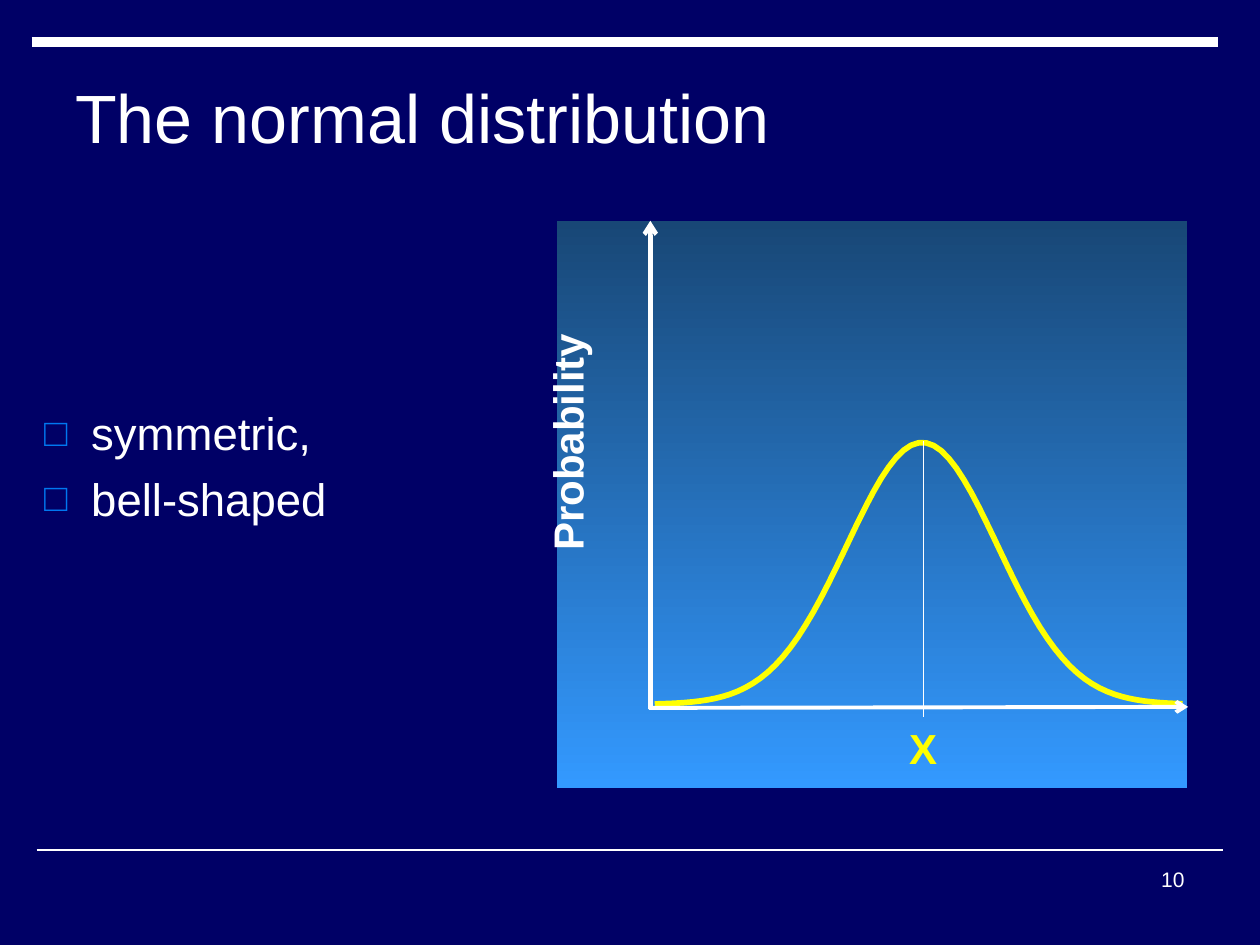
from dataclasses import dataclass
from math import exp

from lxml import etree
from pptx import Presentation
from pptx.dml.color import RGBColor
from pptx.enum.shapes import MSO_CONNECTOR, MSO_SHAPE
from pptx.enum.text import MSO_ANCHOR, PP_ALIGN
from pptx.oxml.ns import qn
from pptx.util import Cm, Pt

STRAIGHT = MSO_CONNECTOR.STRAIGHT
RECTANGLE = MSO_SHAPE.RECTANGLE
TOP, MIDDLE = MSO_ANCHOR.TOP, MSO_ANCHOR.MIDDLE
LEFT, RIGHT = PP_ALIGN.LEFT, PP_ALIGN.RIGHT


@dataclass(frozen=True)
class Theme:
    font: str = "Arial"
    background: str = "000066"
    white: str = "FFFFFF"
    yellow: str = "FFFF00"
    bullet: str = "0078F0"
    panel_top: str = "184776"
    panel_bottom: str = "3399FF"
    title_size: int = 39
    body_size: int = 26
    label_size: int = 24
    number_size: int = 12


theme = Theme()


def add_text(shapes, box, lines, size, color=theme.white, bold=False,
             anchor=TOP, align=LEFT, wrap=True):
    shape = shapes.add_textbox(*(Cm(value) for value in box))
    frame = shape.text_frame
    frame.word_wrap = wrap
    frame.vertical_anchor = anchor
    for index, line in enumerate(lines):
        paragraph = frame.add_paragraph() if index else frame.paragraphs[0]
        paragraph.alignment = align
        run = paragraph.add_run()
        run.text = line
        run.font.name = theme.font
        run.font.size = Pt(size)
        run.font.bold = bold
        run.font.color.rgb = RGBColor.from_string(color)
    return shape


def add_line(shapes, start, end, width, arrow=False):
    line = shapes.add_connector(STRAIGHT, *(Cm(value) for value in (*start, *end)))
    line.line.color.rgb = RGBColor.from_string(theme.white)
    line.line.width = Pt(width)
    if arrow:
        etree.SubElement(line.line._get_or_add_ln(), qn("a:tailEnd"), type="arrow")
    etree.SubElement(line._element.spPr, qn("a:effectLst"))
    return line


presentation = Presentation()
presentation.slide_width, presentation.slide_height = Cm(25.4), Cm(19.05)
slide = presentation.slides.add_slide(presentation.slide_layouts[6])
slide.background.fill.solid()
slide.background.fill.fore_color.rgb = RGBColor.from_string(theme.background)

# Rules at the top and the bottom
add_line(slide.shapes, (0.74, 17.14), (24.66, 17.14), 1)
add_line(slide.shapes, (0.64, 0.85), (24.56, 0.85), 6)

# Title
add_text(slide.shapes, (1.27, 0.76, 22.86, 3.18), ["The normal distribution"],
         theme.title_size, anchor=MIDDLE)

# Bullet list
body = add_text(slide.shapes, (0.64, 8.05, 9.96, 10.57),
                ["symmetric,", "bell-shaped"], theme.body_size)
for paragraph in body.text_frame.paragraphs:
    paragraph.space_before = Pt(6)
    properties = paragraph._p.get_or_add_pPr()
    properties.set("marL", str(Cm(0.95)))
    properties.set("indent", str(Cm(-0.95)))
    bullet_color = etree.SubElement(properties, qn("a:buClr"))
    etree.SubElement(bullet_color, qn("a:srgbClr"), val=theme.bullet)
    etree.SubElement(properties, qn("a:buSzPct"), val="85000")
    etree.SubElement(properties, qn("a:buFont"), typeface=theme.font)
    etree.SubElement(properties, qn("a:buChar"), char="□")

# Chart panel
graph = slide.shapes.add_group_shape().shapes
panel = graph.add_shape(RECTANGLE, Cm(11.23), Cm(4.45), Cm(12.7), Cm(11.43))
panel.shadow.inherit = False
panel.line.fill.background()
panel.fill.gradient()
panel.fill.gradient_angle = 270
for stop, color in zip(panel.fill.gradient_stops, (theme.panel_top, theme.panel_bottom)):
    stop.color.rgb = RGBColor.from_string(color)

# Bell curve
mean, deviation, base, height = 18.59, 1.52, 14.2, 5.28
first, last, steps = 13.2, 23.84, 70
points = []
for step in range(steps + 1):
    x = first + (last - first) * step / steps
    y = base - height * exp(-((x - mean) / deviation) ** 2 / 2)
    points.append((Cm(x), Cm(y)))
builder = graph.build_freeform(*points[0])
builder.add_line_segments(points[1:], close=False)
curve = builder.convert_to_shape()
curve.shadow.inherit = False
curve.fill.background()
curve.line.color.rgb = RGBColor.from_string(theme.yellow)
curve.line.width = Pt(3.25)

# Axes and their labels
add_line(graph, (13.08, 14.27), (23.95, 14.25), 2.25, arrow=True)
add_line(graph, (13.11, 14.3), (13.11, 4.45), 2.5, arrow=True)
probability = add_text(graph, (8.99, 8.28, 4.88, 1.27), ["Probability"],
                       theme.label_size, bold=True, wrap=False)
probability.rotation = 270
add_text(graph, (18.08, 14.45, 1.09, 1.27), ["X"], theme.label_size,
         color=theme.yellow, bold=True, wrap=False)

# Slide number
add_text(slide.shapes, (18.21, 17.35, 5.92, 1.27), ["10"], theme.number_size, align=RIGHT)

# Line of symmetry
add_line(slide.shapes, (18.62, 8.89), (18.62, 14.45), 0.75)

presentation.save("out.pptx")
